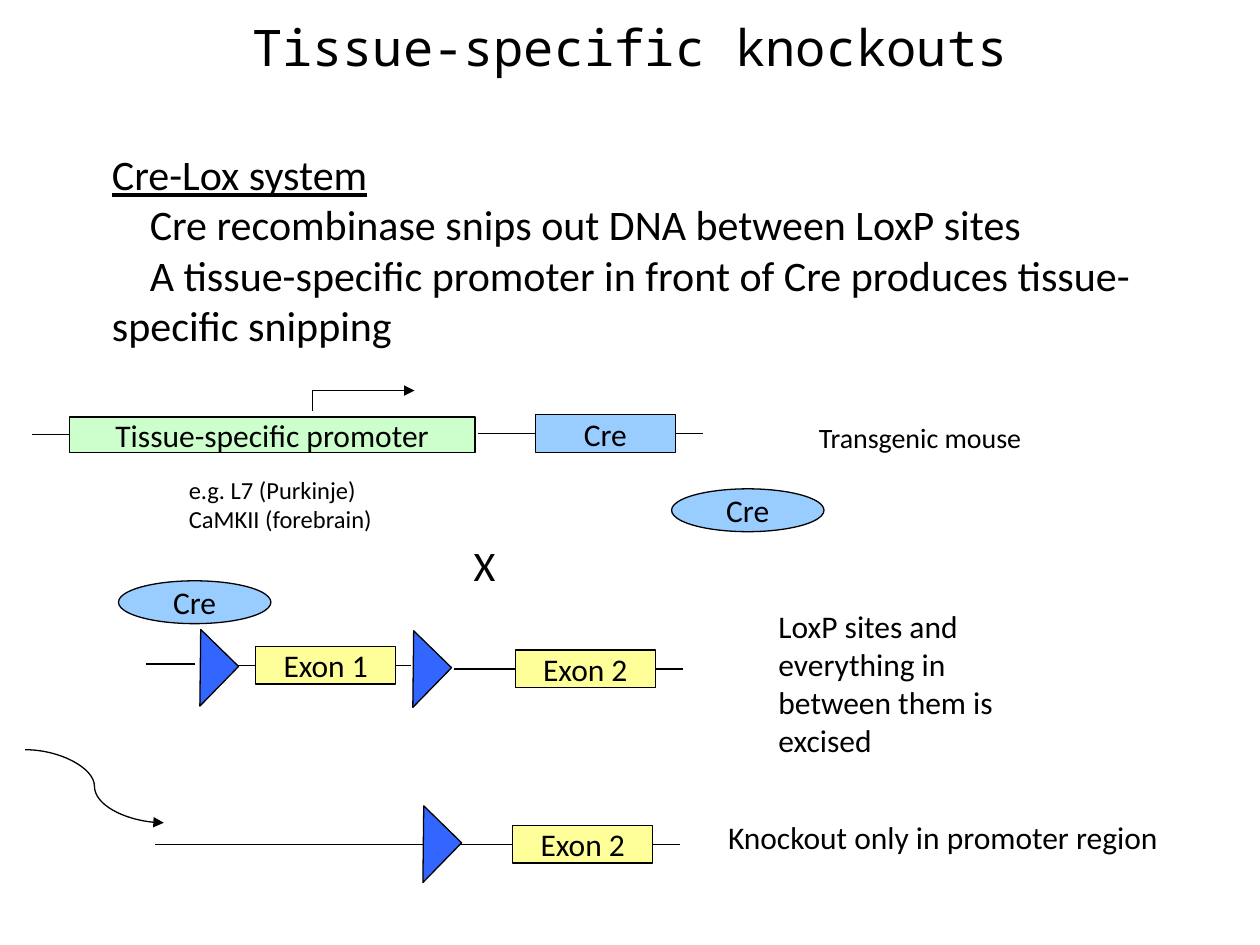
from lxml.etree import SubElement
from pptx import Presentation
from pptx.dml.color import RGBColor
from pptx.enum.shapes import MSO_CONNECTOR as Link, MSO_SHAPE as Shape
from pptx.enum.text import MSO_ANCHOR as Anchor, MSO_AUTO_SIZE as Fit, PP_ALIGN as Align
from pptx.oxml.ns import qn
from pptx.util import Inches, Pt

BLACK = RGBColor(0, 0, 0)
GREEN = RGBColor(0xCC, 0xFF, 0xCC)
SKY = RGBColor(0x99, 0xCC, 0xFF)
YELLOW = RGBColor(0xFF, 0xFF, 0x99)
BLUE = RGBColor(0x33, 0x66, 0xFF)
COLUMNS, ROWS = 100, 75
WIDTH, HEIGHT = Inches(10), Inches(7.5)
COLUMN, ROW = WIDTH / COLUMNS, HEIGHT / ROWS
LEFT, RIGHT = 1, 3


def place(box, x, y):
    """Turn a grid point inside a box into slide lengths."""
    return round((box[0] + x) * COLUMN), round((box[1] + y) * ROW)


def write(paragraph, words, size, face="Calibri"):
    """Add one black run to a paragraph."""
    run = paragraph.add_run()
    run.text = words
    run.font.size, run.font.name = Pt(size), face
    run.font.color.rgb = BLACK
    return run


def caption(slide, box, x, y, w, h, lines, size, wrap=False):
    """Add a text box with one paragraph for each line."""
    frame = slide.shapes.add_textbox(*place(box, x, y), *place((0, 0), w, h)).text_frame
    frame.word_wrap, frame.auto_size = wrap, Fit.SHAPE_TO_FIT_TEXT
    for index, words in enumerate(lines):
        paragraph = frame.add_paragraph() if index else frame.paragraphs[0]
        write(paragraph, words, size)
    return frame


def part(slide, box, kind, x, y, w, h, fill, label=None):
    """Add an outlined shape with an optional centred label."""
    shape = slide.shapes.add_shape(kind, *place(box, x, y), *place((0, 0), w, h))
    shape.shadow.inherit = False
    shape.fill.solid()
    shape.fill.fore_color.rgb = fill
    shape.line.color.rgb, shape.line.width = BLACK, Pt(0.75)
    if label:
        frame = shape.text_frame
        frame.word_wrap, frame.vertical_anchor = False, Anchor.MIDDLE
        frame.paragraphs[0].alignment = Align.CENTER
        write(frame.paragraphs[0], label, 18)
    return shape


def gene(slide, box, x, y, fill, label):
    """Add a gene segment of standard size."""
    return part(slide, box, Shape.RECTANGLE, x, y, 11.1, 3, fill, label)


def enzyme(slide, box, x, y):
    """Add the Cre protein."""
    part(slide, box, Shape.OVAL, x, y, 12.1, 3.4, SKY, "Cre")


def lox_site(slide, box, x, y):
    """Add a LoxP site pointing to the right."""
    part(slide, box, Shape.RIGHT_TRIANGLE, x, y, 4.2, 4.4, BLUE).rotation = 224.3


def stroke(slide, start, end, kind=Link.STRAIGHT, arrow=False):
    """Draw a thin black connector between two points."""
    line = slide.shapes.add_connector(kind, *start, *end)
    line.line.color.rgb, line.line.width = BLACK, Pt(0.75)
    if arrow:
        SubElement(line.line._get_or_add_ln(), qn("a:tailEnd"), type="triangle")
    SubElement(line._element.spPr, qn("a:effectLst"))
    return line


def strand(slide, segment, side, reach):
    """Run DNA outwards from one side of a segment."""
    y = segment.top + segment.height // 2
    x = segment.left + (segment.width if side == RIGHT else 0)
    step = round(reach * COLUMN) * (1 if side == RIGHT else -1)
    stroke(slide, (x, y), (x + step, y)).begin_connect(segment, side)


def heading(slide, box):
    """Format the title."""
    title = slide.shapes.title
    title.left, title.top = place(box, 0, 0)
    title.width, title.height = place((0, 0), 90, 5.1)
    frame = title.text_frame
    frame.auto_size, frame.vertical_anchor = Fit.NONE, Anchor.MIDDLE
    frame.paragraphs[0].alignment = Align.CENTER
    write(frame.paragraphs[0], "Tissue-specific knockouts", 28.8, "Noto Sans Mono")


def summary(slide, box):
    """Explain the Cre-Lox system."""
    lines = (
        "Cre-Lox system",
        "Cre recombinase snips out DNA between LoxP sites",
        "A tissue-specific promoter in front of Cre produces tissue-specific snipping",
    )
    system, *facts = caption(slide, box, 0, 0, 90.1, 17, lines, 24, True).paragraphs
    system.runs[0].font.underline = True
    for fact in facts:
        fact._p.get_or_add_pPr().set("indent", str(round(3 * COLUMN)))


def transgene(slide, box):
    """Draw the promoter, the Cre gene and its product."""
    promoter = part(slide, box, Shape.RECTANGLE, 3, 2.1, 32.2, 2.8, GREEN,
                    "Tissue-specific promoter")
    cre = gene(slide, box, 40, 1.9, SKY, "Cre")
    strand(slide, promoter, LEFT, 3)
    strand(slide, cre, LEFT, 4.6)
    strand(slide, cre, RIGHT, 2.2)
    stroke(slide, place(box, 22.3, 1.6), place(box, 22.3, 0))
    stroke(slide, place(box, 22.3, 0), place(box, 30.4, 0), arrow=True)
    caption(slide, box, 61.5, 1.9, 20.3, 3.7, ["Transgenic mouse"], 16)
    caption(slide, box, 11.5, 6.2, 18, 5.7,
            ["e.g. L7 (Purkinje)", "CaMKII (forebrain)"], 14)
    enzyme(slide, box, 50.8, 7.8)
    caption(slide, box, 34.1, 11.3, 4.2, 5, ["X"], 24)


def floxed_gene(slide, box):
    """Draw the exon flanked by LoxP sites."""
    first = gene(slide, box, 10.9, 5.2, YELLOW, "Exon 1")
    second = gene(slide, box, 31.5, 5.5, YELLOW, "Exon 2")
    stroke(slide, place(box, 2.2, 6.6), place(box, 6.1, 6.6))
    for segment, side, reach in ((first, LEFT, 1.4), (first, RIGHT, 1.2),
                                 (second, LEFT, 4.9), (second, RIGHT, 2.2)):
        strand(slide, segment, side, reach)
    lox_site(slide, box, 4.4, 4.7)
    lox_site(slide, box, 21.3, 4.8)
    enzyme(slide, box, 0, 0)
    caption(slide, box, 51.4, 1.6, 23.1, 13,
            ["LoxP sites and everything in between them is excised"], 18, True)


def knockout(slide, box):
    """Draw the gene left after excision."""
    exon = gene(slide, box, 38.7, 6, YELLOW, "Exon 2")
    stroke(slide, place(box, 0, 0), place(box, 11, 5.8), Link.CURVE, True)
    strand(slide, exon, LEFT, 28.4)
    strand(slide, exon, RIGHT, 2.2)
    lox_site(slide, box, 29.5, 5.3)
    caption(slide, box, 54.8, 4.9, 38.7, 4, ["Knockout only in promoter region"], 18)


def main():
    """Build and save the slide."""
    deck = Presentation()
    deck.slide_width, deck.slide_height = WIDTH, HEIGHT
    slide = deck.slides.add_slide(deck.slide_layouts[5])
    heading(slide, (5, 1.1))
    summary(slide, (7.9, 11.3))
    transgene(slide, (2.5, 31))
    floxed_gene(slide, (9.4, 46.1))
    knockout(slide, (2, 59.5))
    deck.save("out.pptx")


if __name__ == "__main__":
    main()
